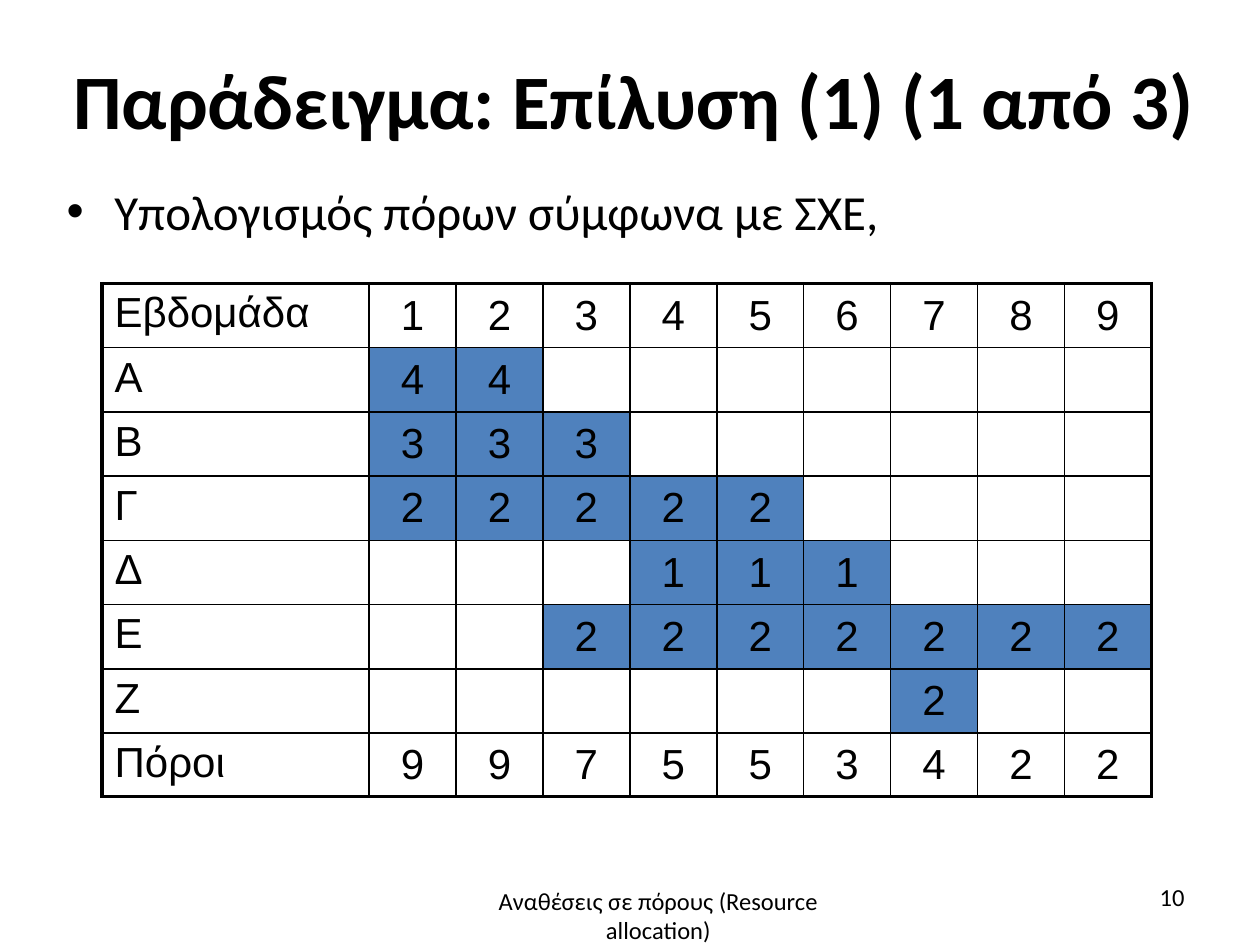
"""Build the slide that sums weekly resource needs over an activity schedule."""
import pptx
import pptx.dml.color
import pptx.enum.text
import pptx.oxml
import pptx.oxml.ns
import pptx.util
from lxml import etree

ALIGN = pptx.enum.text.PP_ALIGN
MIDDLE = pptx.enum.text.MSO_ANCHOR.MIDDLE
TOP = pptx.enum.text.MSO_ANCHOR.TOP
BLACK, BUSY, WHITE = "000000", "4F81BD", "FFFFFF"
inch = pptx.util.Inches


def colour(value):
    return pptx.dml.color.RGBColor.from_string(value)


def write(paragraph, wording, size, font, align, bold=False):
    paragraph.alignment = align
    run = paragraph.add_run()
    run.text = wording
    run.font.size = pptx.util.Pt(size)
    run.font.name = font
    run.font.bold = bold
    run.font.color.rgb = colour(BLACK)


deck = pptx.Presentation()
deck.slide_width, deck.slide_height = inch(10), inch(7.5)
slide = deck.slides.add_slide(deck.slide_layouts[6])

passages = [
    ("Παράδειγμα: Επίλυση (1) (1 από 3)", (0.43, 0.05, 9.21, 1.5), 44, ALIGN.CENTER),
    ("Υπολογισμός πόρων σύμφωνα με ΣΧΕ,", (0.43, 1.39, 8.94, 0.55), 28, ALIGN.LEFT),
    ("Αναθέσεις σε πόρους (Resource allocation)", (3.48, 6.98, 3.49, 0.55), 14, ALIGN.CENTER),
    ("10", (7.17, 6.95, 2.33, 0.4), 14, ALIGN.RIGHT),
]
frames = []
for wording, place, size, align in passages:
    frame = slide.shapes.add_textbox(*map(inch, place)).text_frame
    frame.word_wrap = True
    write(frame.paragraphs[0], wording, size, "Calibri", align, bold=size == 44)
    frames.append(frame)

heading, statement = frames[:2]
heading.vertical_anchor = MIDDLE
heading.margin_left = heading.margin_right = heading.margin_bottom = 0
heading.margin_top = inch(0.02)
heading.paragraphs[0].line_spacing = 0.98

bullet_format = statement.paragraphs[0]._p.get_or_add_pPr()
bullet_format.set("marL", str(inch(0.38)))
bullet_format.set("indent", str(-inch(0.38)))
etree.SubElement(bullet_format, pptx.oxml.ns.qn("a:buFont"), typeface="Arial")
etree.SubElement(bullet_format, pptx.oxml.ns.qn("a:buChar"), char="•")

weeks = range(1, 10)
activities = [
    ("Α", 1, 2, 4),
    ("Β", 1, 3, 3),
    ("Γ", 1, 5, 2),
    ("Δ", 4, 6, 1),
    ("Ε", 3, 9, 2),
    ("Ζ", 7, 7, 2),
]
schedule = [
    [name] + [need if first <= week <= last else "" for week in weeks]
    for name, first, last, need in activities
]
totals = [sum(need for _, first, last, need in activities if first <= week <= last) for week in weeks]
entries = [["Εβδομάδα", *weeks], *schedule, ["Πόροι", *totals]]

label_width, week_width, row_height, total_height = 2.12, 0.69, 0.51, 0.48
last_row, last_column = len(entries) - 1, len(weeks)
resources = slide.shapes.add_table(
    len(entries), last_column + 1, inch(0.81), inch(2.25),
    inch(label_width + last_column * week_width),
    inch(last_row * row_height + total_height),
).table
resources.first_row = resources.horz_banding = False
for index, column in enumerate(resources.columns):
    column.width = inch(week_width if index else label_width)
for index, row in enumerate(resources.rows):
    row.height = inch(total_height if index == last_row else row_height)

for r, values in enumerate(entries):
    for c, value in enumerate(values):
        cell = resources.cell(r, c)
        outer_edges = {"L": c == 0, "R": c == last_column, "T": r == 0, "B": r == last_row}
        for side, outer in outer_edges.items():
            width = pptx.util.Pt(2.25 if outer else 1)
            cell._tc.get_or_add_tcPr().append(pptx.oxml.parse_xml(
                f'<a:ln{side} {pptx.oxml.ns.nsdecls("a")} w="{width}"><a:solidFill>'
                f'<a:srgbClr val="{BLACK}"/></a:solidFill></a:ln{side}>'
            ))
        busy = c > 0 and 0 < r < last_row and value != ""
        cell.fill.solid()
        cell.fill.fore_color.rgb = colour(BUSY if busy else WHITE)
        cell.vertical_anchor = MIDDLE if c else TOP
        if value != "":
            write(cell.text_frame.paragraphs[0], str(value), 24, "Arial",
                  ALIGN.CENTER if c else ALIGN.LEFT)

deck.save("out.pptx")
